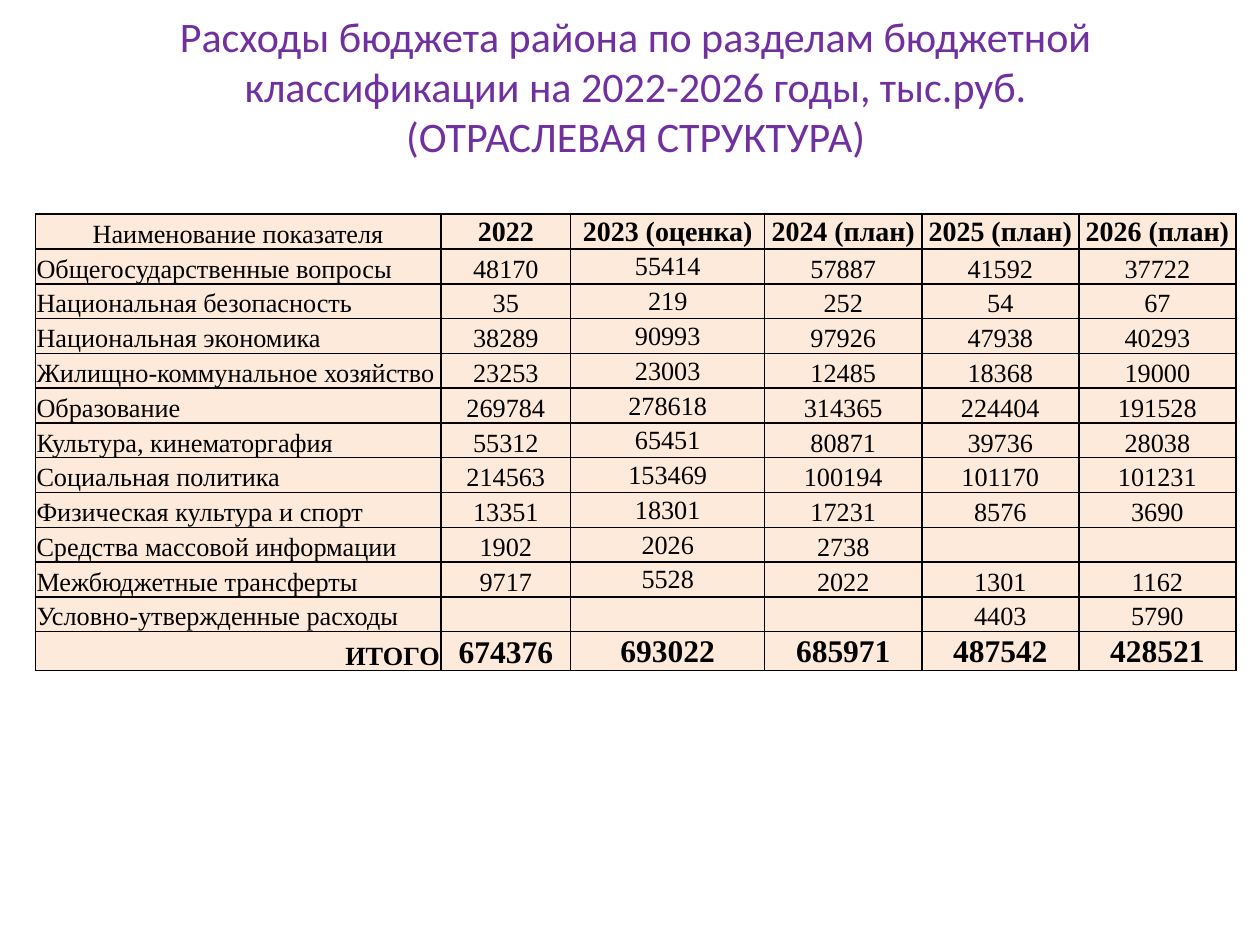
from dataclasses import dataclass
from typing import NamedTuple

from lxml import etree
from pptx import Presentation
from pptx.dml.color import RGBColor
from pptx.enum import text
from pptx.oxml import ns
from pptx.util import Inches, Pt

LEFT, CENTER, RIGHT = text.PP_ALIGN.LEFT, text.PP_ALIGN.CENTER, text.PP_ALIGN.RIGHT
MIDDLE, BOTTOM = text.MSO_ANCHOR.MIDDLE, text.MSO_ANCHOR.BOTTOM


@dataclass(frozen=True)
class Theme:
    title_font: str = "Calibri"
    table_font: str = "Times New Roman"
    title: str = "7030A0"
    ink: str = "000000"
    paper: str = "FFFFFF"
    cell: str = "FDEADA"
    title_size: int = 24
    body_size: int = 15
    head_size: int = 16
    total_size: int = 18
    border: int = 1


class Style(NamedTuple):
    size: int
    bold: bool = False
    align: text.PP_ALIGN = CENTER
    anchor: text.MSO_ANCHOR = BOTTOM


class Row(NamedTuple):
    name: str
    values: tuple[str, ...]


THEME = Theme()
LEFT_EDGE, WIDTH = 0.28, 9.53
TITLE = ("Расходы бюджета района по разделам бюджетной классификации "
         "на 2022-2026 годы, тыс.руб.\v(ОТРАСЛЕВАЯ СТРУКТУРА)")
ROWS = [
    Row("Наименование показателя",
        ("2022", "2023 (оценка)", "2024 (план)", "2025 (план)", "2026 (план)")),
    Row("Общегосударственные вопросы", ("48170", "55414", "57887", "41592", "37722")),
    Row("Национальная безопасность", ("35", "219", "252", "54", "67")),
    Row("Национальная экономика", ("38289", "90993", "97926", "47938", "40293")),
    Row("Жилищно-коммунальное хозяйство", ("23253", "23003", "12485", "18368", "19000")),
    Row("Образование", ("269784", "278618", "314365", "224404", "191528")),
    Row("Культура, кинематоргафия", ("55312", "65451", "80871", "39736", "28038")),
    Row("Социальная политика", ("214563", "153469", "100194", "101170", "101231")),
    Row("Физическая культура и спорт", ("13351", "18301", "17231", "8576", "3690")),
    Row("Средства массовой информации", ("1902", "2026", "2738", "", "")),
    Row("Межбюджетные трансферты", ("9717", "5528", "2022", "1301", "1162")),
    Row("Условно-утвержденные расходы", ("", "", "", "4403", "5790")),
    Row("ИТОГО", ("674376", "693022", "685971", "487542", "428521")),
]


def cell_style(row: int, col: int) -> Style:
    """Header and total rows stand out; the 2023 column is centred vertically."""
    if row == 0:
        return Style(THEME.head_size, True, anchor=MIDDLE) if col else Style(THEME.body_size)
    if row == len(ROWS) - 1:
        if col == 0:
            return Style(THEME.body_size, True, RIGHT)
        return Style(THEME.total_size, True, anchor=BOTTOM if col == 1 else MIDDLE)
    return Style(THEME.body_size, align=CENTER if col else LEFT,
                 anchor=MIDDLE if col == 2 else BOTTOM)


def set_font(p, name: str, size: int, color: str, bold: bool = False) -> None:
    p.font.name, p.font.size, p.font.bold = name, Pt(size), bold
    p.font.color.rgb = RGBColor.from_string(color)


def set_borders(cell) -> None:
    tc_pr = cell._tc.get_or_add_tcPr()
    for i, side in enumerate(("lnL", "lnR", "lnT", "lnB")):
        ln = etree.Element(ns.qn(f"a:{side}"), w=str(Pt(THEME.border)))
        fill = etree.SubElement(ln, ns.qn("a:solidFill"))
        etree.SubElement(fill, ns.qn("a:srgbClr"), val=THEME.ink)
        tc_pr.insert(i, ln)  # borders come before the fill


def fill_cell(cell, value: str, style: Style) -> None:
    cell.fill.solid()
    cell.fill.fore_color.rgb = RGBColor.from_string(THEME.cell)
    cell.margin_left = cell.margin_right = cell.margin_top = Inches(0.01)
    cell.margin_bottom = 0
    cell.vertical_anchor = style.anchor
    p = cell.text_frame.paragraphs[0]
    p.text, p.alignment = value, style.align
    set_font(p, THEME.table_font, style.size, THEME.ink, style.bold)
    set_borders(cell)


def add_title(slide) -> None:
    sp = slide.shapes.add_textbox(Inches(LEFT_EDGE), Inches(0.13), Inches(WIDTH), Inches(1.1))
    sp.fill.solid()
    sp.fill.fore_color.rgb = RGBColor.from_string(THEME.paper)
    tf = sp.text_frame
    tf.word_wrap, tf.vertical_anchor = True, MIDDLE
    p = tf.paragraphs[0]
    p.text, p.alignment = TITLE, CENTER
    set_font(p, THEME.title_font, THEME.title_size, THEME.title)


def add_budget_table(slide) -> None:
    fixed = [3.22, 1.03, 1.54]
    plan_width = (WIDTH - sum(fixed)) / 3
    widths = fixed + [plan_width] * 3
    table = slide.shapes.add_table(len(ROWS), len(widths), Inches(LEFT_EDGE), Inches(1.7),
                                   Inches(WIDTH), Inches(3.59)).table
    table.horz_banding = False
    for column, width in zip(table.columns, widths):
        column.width = Inches(width)
    for i, row in enumerate(ROWS):
        for j, value in enumerate((row.name, *row.values)):
            fill_cell(table.cell(i, j), value, cell_style(i, j))


def main() -> None:
    prs = Presentation()
    prs.slide_width, prs.slide_height = Inches(10), Inches(7.5)
    slide = prs.slides.add_slide(prs.slide_layouts[6])
    add_title(slide)
    add_budget_table(slide)
    prs.save("out.pptx")


if __name__ == "__main__":
    main()
